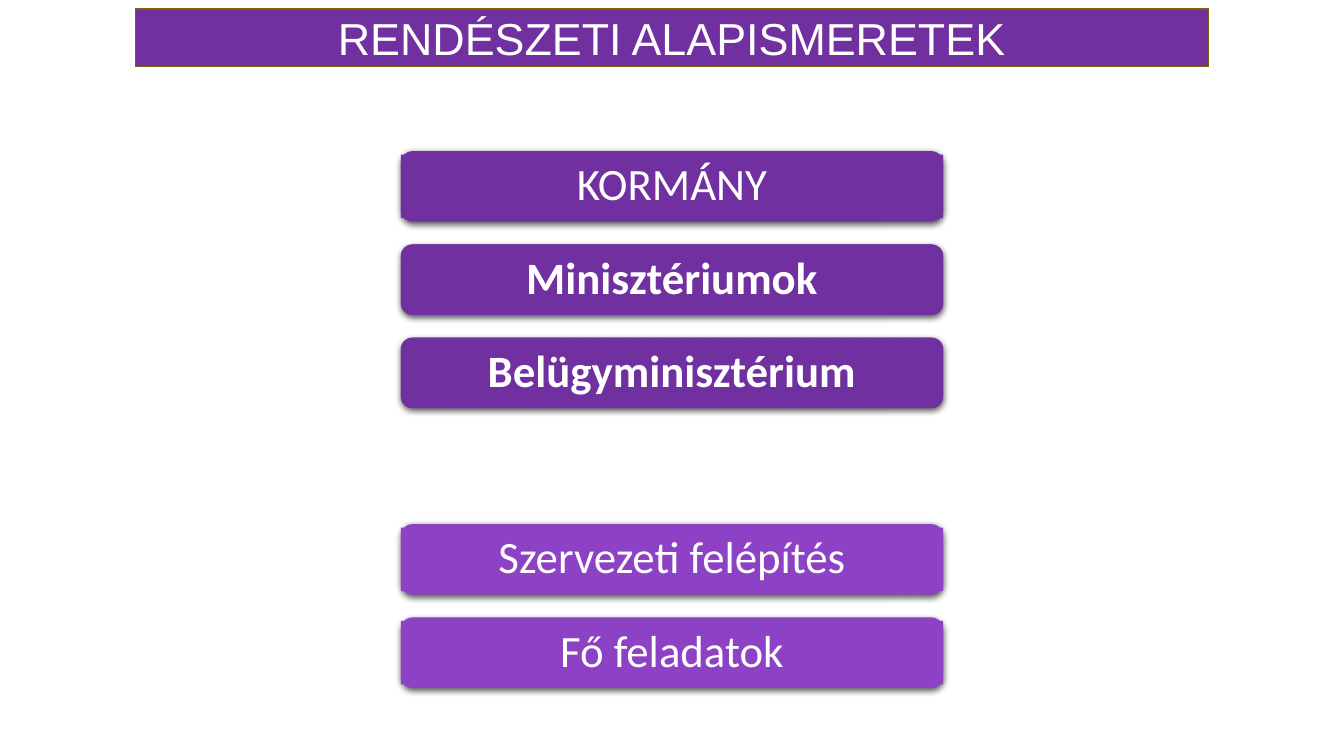
from lxml import etree
from pptx import Presentation, util as u
from pptx.dml.color import RGBColor
from pptx.enum import shapes, text
from pptx.oxml.ns import qn

# Content: grid row, label, fill, is the label bold in a rounded box
WIDTH, HEIGHT = 13.33, 7.5
TITLE = "RENDÉSZETI ALAPISMERETEK"
PURPLE, LILAC, WHITE, OLIVE = "7030A0", "8D42C6", "FFFFFF", "806000"
LEVELS = [
    (0, "KORMÁNY", PURPLE, False),
    (1, "Minisztériumok", PURPLE, True),
    (2, "Belügyminisztérium", PURPLE, True),
    (4, "Szervezeti felépítés", LILAC, False),
    (5, "Fő feladatok", LILAC, False),
]
FIRST_TOP, ROW_PITCH = 1.5, 0.925
BAR_W, BAR_H, LABEL_H = 5.38, 0.7, 0.63
TITLE_W, TITLE_H, TITLE_TOP = 10.64, 0.57, 0.09

RECT = shapes.MSO_SHAPE.RECTANGLE
ROUNDED = shapes.MSO_SHAPE.ROUNDED_RECTANGLE


def color(value):
    return RGBColor.from_string(value)


def add_box(parent, kind, top, width, height, fill):
    """Add a horizontally centred box without outline or shadow."""
    box = parent.add_shape(kind, u.Inches((WIDTH - width) / 2), u.Inches(top),
                           u.Inches(width), u.Inches(height))
    box.shadow.inherit = False
    box.fill.solid()
    box.fill.fore_color.rgb = color(fill)
    box.line.fill.background()
    return box


def add_label(box, words, font, bold=False):
    frame = box.text_frame
    frame.word_wrap = True
    frame.vertical_anchor = text.MSO_ANCHOR.MIDDLE
    para = frame.paragraphs[0]
    para.alignment = text.PP_ALIGN.CENTER
    span = para.add_run()
    span.text = words
    span.font.name, span.font.size, span.font.bold = font, u.Pt(32), bold
    span.font.color.rgb = color(WHITE)
    return para


def add_shadow(box):
    effects = box._element.spPr.find(qn("a:effectLst"))
    shadow = etree.SubElement(effects, qn("a:outerShdw"), blurRad=str(u.Pt(4.5)),
                              dist=str(u.Pt(1.5)), dir="5400000", rotWithShape="0")
    tint = etree.SubElement(shadow, qn("a:srgbClr"), val="000000")
    etree.SubElement(tint, qn("a:alpha"), val="63000")


def add_level(page, row, words, fill, bold):
    group = page.shapes.add_group_shape().shapes
    top = FIRST_TOP + row * ROW_PITCH
    add_shadow(add_box(group, ROUNDED, top, BAR_W, BAR_H, fill))
    if bold:
        box = add_box(group, ROUNDED, top, BAR_W, BAR_H, fill)
        frame = box.text_frame
        frame.margin_left = frame.margin_right = u.Inches(0.25)
        frame.margin_top = frame.margin_bottom = u.Inches(0.25)
    else:
        box = add_box(group, RECT, top + (BAR_H - LABEL_H) / 2, BAR_W, LABEL_H, fill)
    para = add_label(box, words, "Calibri", bold)
    para.line_spacing = 0.9
    after = etree.SubElement(para._p.get_or_add_pPr(), qn("a:spcAft"))
    etree.SubElement(after, qn("a:spcPct"), val="35000")


def main():
    deck = Presentation()
    deck.slide_width, deck.slide_height = u.Inches(WIDTH), u.Inches(HEIGHT)
    page = deck.slides.add_slide(deck.slide_layouts[6])

    # Title band
    band = add_box(page.shapes, RECT, TITLE_TOP, TITLE_W, TITLE_H, PURPLE)
    band.line.color.rgb = color(OLIVE)
    band.line.width = u.Pt(1)
    add_label(band, TITLE, "Arial").space_after = u.Pt(3)

    # Hierarchy bars
    for level in LEVELS:
        add_level(page, *level)

    deck.save("out.pptx")


if __name__ == "__main__":
    main()
